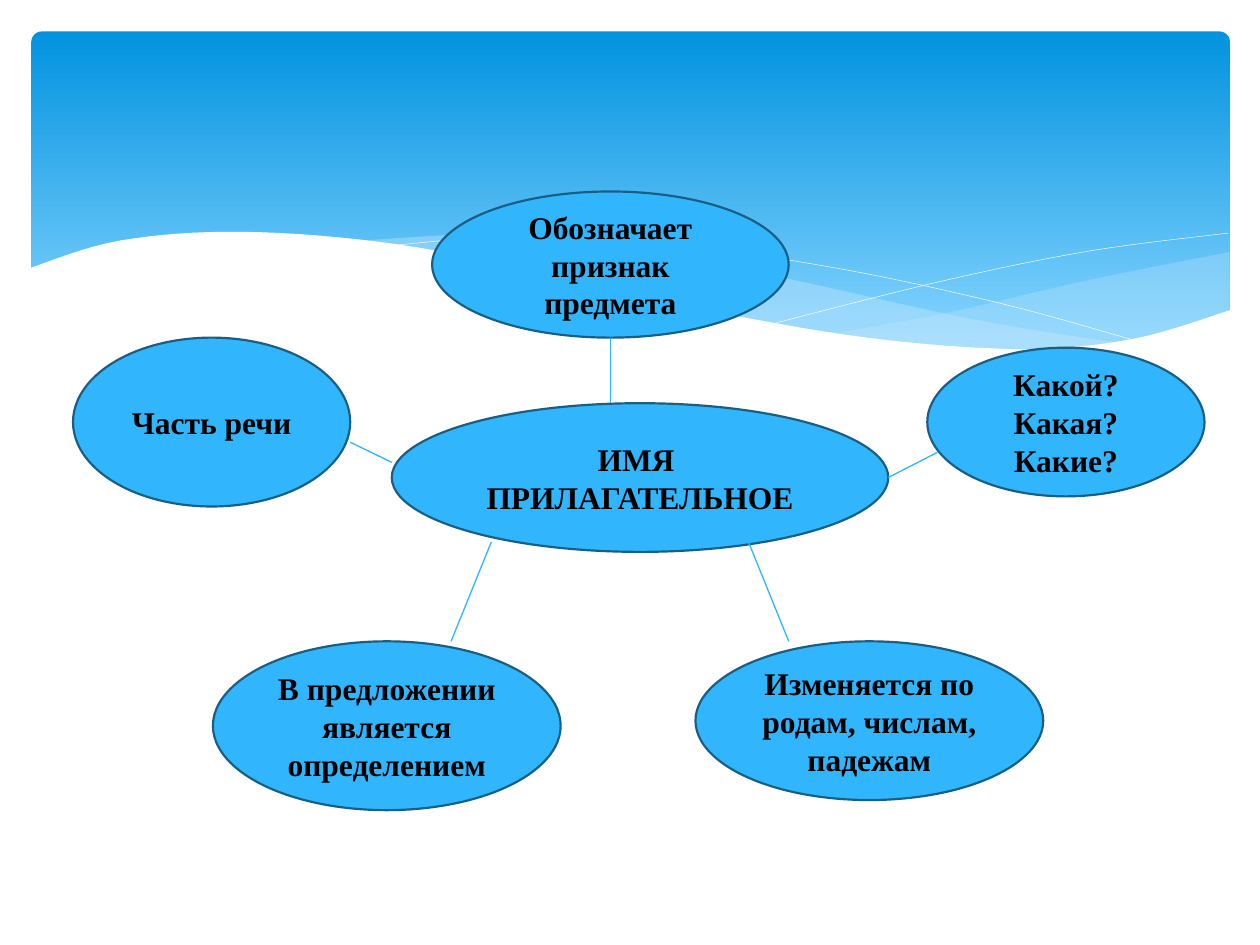
import pptx
import pptx.dml.color
import pptx.enum.shapes
import pptx.enum.text
import pptx.oxml
import pptx.oxml.ns
import pptx.util

Inches = pptx.util.Inches
Pt = pptx.util.Pt
RGBColor = pptx.dml.color.RGBColor
SHAPE = pptx.enum.shapes.MSO_SHAPE

WHITE = RGBColor(0xFF, 0xFF, 0xFF)
BLACK = RGBColor(0x00, 0x00, 0x00)
SKY_TOP = RGBColor(0x02, 0x93, 0xE0)
SKY_BOTTOM = RGBColor(0x83, 0xD3, 0xFE)
MIST = RGBColor(0xC6, 0xE7, 0xFC)
BUBBLE = RGBColor(0x31, 0xB6, 0xFD)
OUTLINE = RGBColor(0x19, 0x5F, 0x84)
DRAWING_NS = pptx.oxml.ns.nsdecls("a")

deck = pptx.Presentation()
deck.slide_width, deck.slide_height = Inches(10), Inches(7.5)
page = deck.slides.add_slide(deck.slide_layouts[6])


def smooth(knots, steps=8):
    """Return points on a Catmull-Rom curve that passes through the knots."""
    padded = [knots[0], *knots, knots[-1]]
    points = [knots[0]]
    for quad in zip(padded, padded[1:], padded[2:], padded[3:]):
        for step in range(1, steps + 1):
            t = step / steps
            points.append(tuple(
                b + t * (c - a) / 2 + t**2 * (2 * a - 5 * b + 4 * c - d) / 2 + t**3 * (3 * b - a - 3 * c + d) / 2
                for a, b, c, d in zip(*quad)
            ))
    return points


def add_wave(points, closed):
    corners = [(Inches(x), Inches(y)) for x, y in points]
    builder = page.shapes.build_freeform(*corners[0])
    builder.add_line_segments(corners[1:], close=closed)
    wave = builder.convert_to_shape()
    wave.shadow.inherit = False
    return wave


# Sky banner
sky = page.shapes.add_shape(SHAPE.ROUNDED_RECTANGLE, Inches(0.25), Inches(0.25), Inches(9.51), Inches(2.7))
sky.adjustments[0] = 0.03
sky.shadow.inherit = False
sky.line.fill.background()
sky.fill.gradient()
sky.fill.gradient_angle = 270
for stop, (position, color) in zip(sky.fill.gradient_stops, [(0, SKY_TOP), (0.9, SKY_BOTTOM)]):
    stop.position = position
    stop.color.rgb = color

# Each filled wave lies between an upper and a lower edge
right_mist = (
    smooth([(9.76, 2), (8.61, 2.23), (7.53, 2.48), (6.61, 2.65)])
    + smooth([(6.61, 2.65), (7.57, 2.76), (8.35, 2.77), (9.05, 2.69), (9.76, 2.47)])
)
long_mist = (
    smooth([(8.93, 2.73), (7.75, 2.54), (6.29, 2.22), (5.14, 1.98), (3.99, 1.86), (2.86, 1.91)])
    + smooth([(2.86, 1.91), (4.49, 2.22), (6.01, 2.55), (7.48, 2.76), (8.93, 2.73)])
)
white_crest = smooth([
    (9.77, 2.46), (8.99, 2.69), (8.09, 2.77), (6.88, 2.68), (5.55, 2.45),
    (4.47, 2.2), (3.16, 1.94), (1.93, 1.84), (0.95, 1.91), (0.23, 2.13),
])
white_wave = white_crest + [(0.23, 3.29), (9.77, 3.29)]
falling_thread = smooth([(3.09, 1.95), (4.16, 1.87), (5.33, 1.94), (6.65, 2.13), (7.95, 2.41), (9.07, 2.72)])
rising_thread = smooth([(6.13, 2.57), (7.48, 2.23), (8.66, 1.99), (9.75, 1.85)])

# Back to front: mists, threads, then the white wave that cuts off the banner
for points, color, opacity in [
    (right_mist, MIST, 29),
    (long_mist, MIST, 40),
    (falling_thread, None, None),
    (rising_thread, None, None),
    (white_wave, WHITE, 100),
]:
    wave = add_wave(points, closed=color is not None)
    if color is None:
        wave.fill.background()
        wave.line.color.rgb = WHITE
        wave.line.width = Pt(0.25)
        continue
    wave.line.fill.background()
    wave.fill.solid()
    wave.fill.fore_color.rgb = color
    if opacity < 100:
        tint = wave._element.spPr.find(".//" + pptx.oxml.ns.qn("a:srgbClr"))
        tint.append(pptx.oxml.parse_xml(f'<a:alpha {DRAWING_NS} val="{opacity * 1000}"/>'))

# Word bubbles: left, top, width, height, paragraphs
bubbles = [
    (3.11, 3.2, 3.94, 1.18, ["ИМЯ ", "ПРИЛАГАТЕЛЬНОЕ"]),
    (0.58, 2.68, 2.2, 1.34, ["Часть речи"]),
    (3.43, 1.52, 2.83, 1.16, ["Обозначает признак предмета"]),
    (7.36, 2.76, 2.2, 1.18, ["Какой?", "Какая? Какие?"]),
    (1.69, 5.09, 2.76, 1.34, ["В предложении является определением"]),
    (5.52, 5.09, 2.76, 1.26, ["Изменяется по родам, числам, падежам"]),
]
font_format = {"name": "Times New Roman", "size": Pt(18), "bold": True}
for *frame, lines in bubbles:
    bubble = page.shapes.add_shape(SHAPE.OVAL, *map(Inches, frame))
    bubble.shadow.inherit = False
    bubble.fill.solid()
    bubble.fill.fore_color.rgb = BUBBLE
    bubble.line.color.rgb = OUTLINE
    bubble.line.width = Pt(1.25)
    text = bubble.text_frame
    text.word_wrap = True
    text.vertical_anchor = pptx.enum.text.MSO_ANCHOR.MIDDLE
    text.text = "\n".join(lines)
    for para in text.paragraphs:
        para.alignment = pptx.enum.text.PP_ALIGN.CENTER
        for span in para.runs:
            for name, value in font_format.items():
                setattr(span.font, name, value)
            span.font.color.rgb = BLACK

# Spokes between the centre bubble and the others
top_left, top_top, top_width, top_height, top_lines = bubbles[2]
top_middle = top_left + top_width / 2
spokes = [
    (2.78, 3.51, 3.11, 3.67),
    (top_middle, top_top + top_height, top_middle, 3.2),
    (7.05, 3.79, 7.44, 3.59),
    (3.9, 4.3, 3.58, 5.09),
    (5.94, 4.3, 6.26, 5.09),
]
for ends in spokes:
    spoke = page.shapes.add_connector(pptx.enum.shapes.MSO_CONNECTOR.STRAIGHT, *map(Inches, ends))
    spoke.line.color.rgb = BUBBLE
    spoke.line.width = Pt(0.75)
    spoke._element.spPr.append(pptx.oxml.parse_xml(f"<a:effectLst {DRAWING_NS}/>"))

deck.save("out.pptx")
